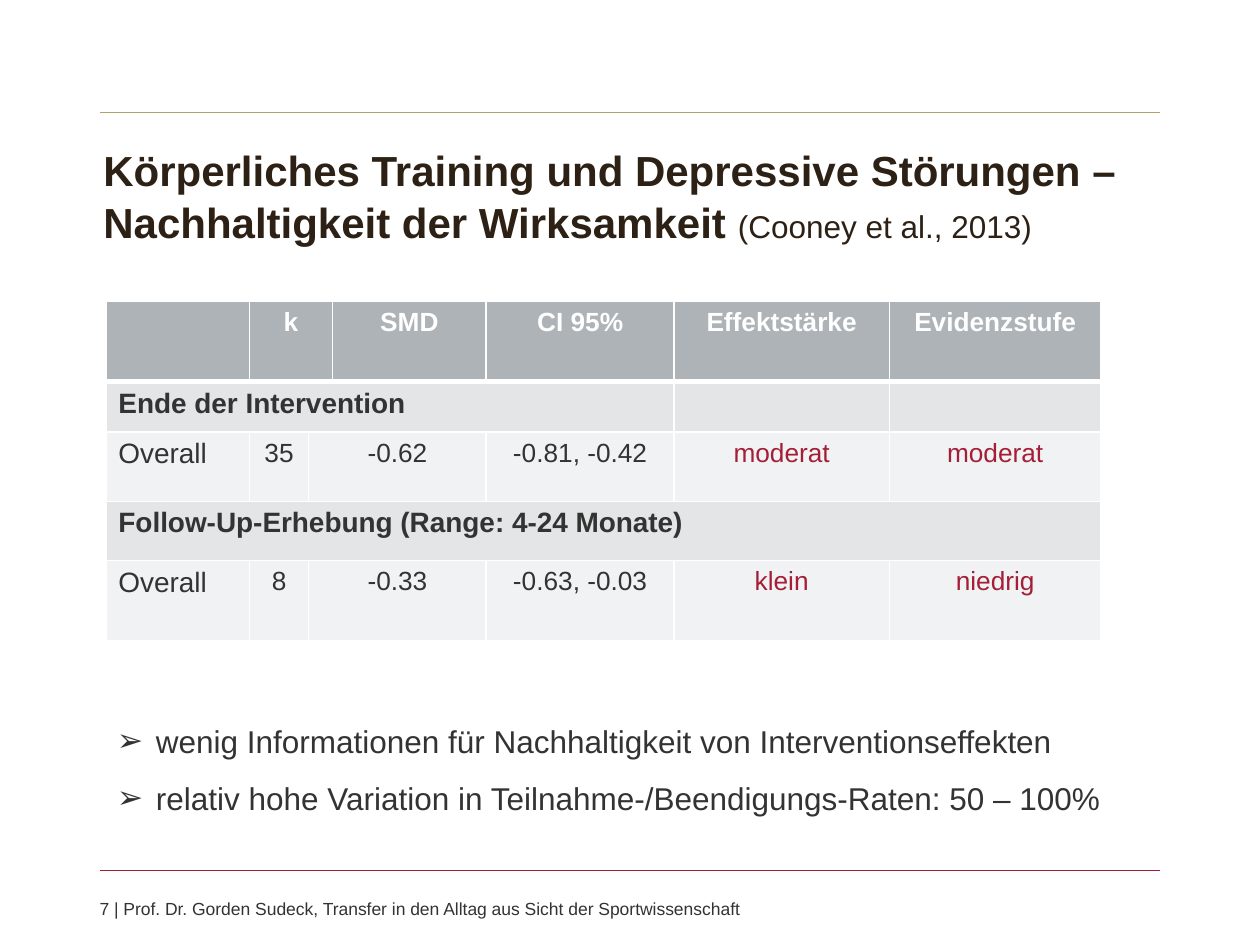
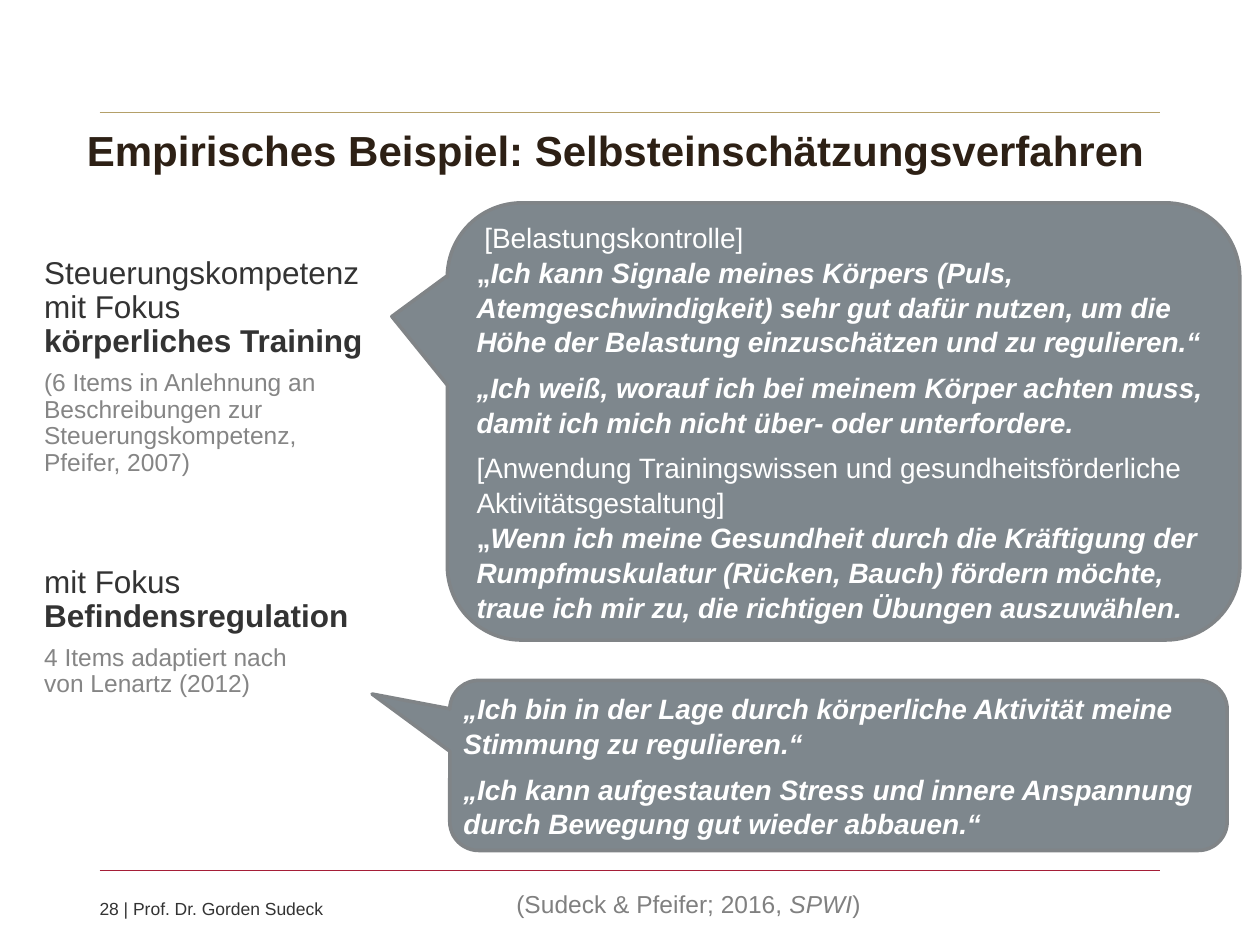
from copy import deepcopy
from dataclasses import dataclass
from typing import NamedTuple

from lxml.etree import SubElement
from pptx import Presentation
from pptx.dml.color import RGBColor as Rgb
from pptx.enum.shapes import MSO_CONNECTOR as Conn, MSO_SHAPE as Shp
from pptx.enum.text import MSO_ANCHOR as Anchor, PP_ALIGN as Align
from pptx.oxml.ns import qn
from pptx.util import Emu, Inches, Pt

SLIDE_W, SLIDE_H = Inches(10), Inches(7.5)


@dataclass(frozen=True)
class Theme:
    """Colours, type sizes and line spacing of the deck."""
    font: str = "Arial"
    title_ink: str = "2D2015"
    ink: str = "333333"
    muted: str = "858585"
    source: str = "808080"
    white: str = "FFFFFF"
    red: str = "A51E37"
    gold: str = "B4A069"
    head: str = "ADB3B7"
    section: str = "E3E5E6"
    row: str = "F1F2F3"
    bubble: str = "7E878D"
    bubble_edge: str = "808487"
    title: float = 24
    body: float = 18
    label: float = 16
    value: float = 15
    note: float = 14
    footer: float = 10
    leading: float = 1.04
    tight: float = 0.97


T = Theme()


class Box(NamedTuple):
    """Place in per cent of the slide's width and height."""
    x: float
    y: float
    w: float
    h: float

    def emu(self) -> tuple:
        """Return left, top, width and height in EMU."""
        return across(self.x), down(self.y), across(self.w), down(self.h)


class Run(NamedTuple):
    """Text with the format that differs from its paragraph."""
    text: str
    fmt: dict = {}


class Para(NamedTuple):
    """Runs of one paragraph with its space before and after."""
    runs: tuple
    before: float = 0
    after: float = 0


class Cell(NamedTuple):
    """Text of a table cell and the columns it covers."""
    text: str = ""
    span: int = 1
    fmt: dict = {}


class Row(NamedTuple):
    """Height, fill and cells of a table row."""
    height: float
    fill: str
    cells: tuple
    rule: float = 1


class Callout(NamedTuple):
    """Speech bubble with its pointer and paragraphs."""
    box: Box
    tip: tuple
    inset: float
    paras: tuple


def across(share: float) -> Emu:
    """Turn per cent of the slide's width into EMU."""
    return Emu(round(SLIDE_W * share / 100))


def down(share: float) -> Emu:
    """Turn per cent of the slide's height into EMU."""
    return Emu(round(SLIDE_H * share / 100))


def add_run(p, text: str, *, size: float = T.body, color: str = T.ink,
            bold: bool = False, italic: bool = False) -> None:
    """Add formatted text, with a line break at each newline."""
    for i, part in enumerate(text.split("\n")):
        if i:
            p.add_line_break()
            p._p[-1].append(deepcopy(r._r.rPr))
        r = p.add_run()
        r.text = part
        f = r.font
        f.name, f.size, f.bold, f.italic = T.font, Pt(size), bold, italic
        f.color.rgb = Rgb.from_string(color)
        if not part:
            p._p.remove(r._r)


def write(tf, paras: tuple, *, align=Align.LEFT, anchor=None, inset: tuple | None = None,
          spacing: float | None = None, bullet: str = "", **fmt) -> None:
    """Fill a text frame with paragraphs in one base format."""
    tf.word_wrap = True
    if anchor is not None:
        tf.vertical_anchor = anchor
    if inset is not None:
        tf.margin_left = tf.margin_right = Inches(inset[0])
        tf.margin_top = tf.margin_bottom = Inches(inset[1])
    for i, para in enumerate(paras):
        p = tf.add_paragraph() if i else tf.paragraphs[0]
        if bullet:
            pr = p._p.get_or_add_pPr()
            pr.set("marL", str(Inches(0.31)))
            pr.set("indent", str(-Inches(0.31)))
            SubElement(pr, qn("a:buFont"), typeface=T.font)
            SubElement(pr, qn("a:buChar"), char=bullet)
        p.alignment = align
        if spacing:
            p.line_spacing = spacing
        if i and para.before:
            p.space_before = Pt(para.before)
        if para.after:
            p.space_after = Pt(para.after)
        for run in para.runs:
            add_run(p, run.text, **{**fmt, **run.fmt})


def add_text(s, box: Box, paras: tuple, **fmt) -> None:
    """Place a text box."""
    write(s.shapes.add_textbox(*box.emu()).text_frame, paras, **fmt)


def add_rule(s, y: float, color: str) -> None:
    """Draw a thin line from margin to margin."""
    ln = s.shapes.add_connector(Conn.STRAIGHT, across(7.9), down(y), across(92.1), down(y))
    ln.line.color.rgb = Rgb.from_string(color)
    ln.line.width = Pt(0.75)
    SubElement(ln._element.spPr, qn("a:effectLst"))


def add_slide(prs, title: Box, runs: tuple, footer: str):
    """Start a slide with rules, title and footer."""
    s = prs.slides.add_slide(prs.slide_layouts[6])
    add_rule(s, 11.87, T.gold)
    add_rule(s, 92.13, T.red)
    add_text(s, title, (Para(runs),), size=T.title, color=T.title_ink, bold=True,
             anchor=Anchor.BOTTOM, inset=(0, 0), spacing=T.leading)
    add_text(s, Box(7.9, 95.07, 84.3, 2.27), (Para((Run(footer),)),),
             size=T.footer, inset=(0, 0))
    return s


def add_grid(s, x: float, y: float, cols: tuple, heights: tuple):
    """Add a plain table with the given columns and rows."""
    box = Box(x, y, sum(cols), sum(heights))
    tbl = s.shapes.add_table(len(heights), len(cols), *box.emu()).table
    tbl.first_row = tbl.horz_banding = False
    for col, w in zip(tbl.columns, cols):
        col.width = across(w)
    for row, h in zip(tbl.rows, heights):
        row.height = down(h)
    return tbl


def style_cell(c, fill: str, rule: float) -> None:
    """Give a cell its fill and white borders."""
    pr = c._tc.get_or_add_tcPr()
    for side in "LRTB":
        width = rule if side == "B" else 1
        ln = SubElement(pr, qn(f"a:ln{side}"), w=str(Pt(width)))
        SubElement(SubElement(ln, qn("a:solidFill")), qn("a:srgbClr"), val=T.white)
    c.fill.solid()
    c.fill.fore_color.rgb = Rgb.from_string(fill)


def add_results(s, rows: tuple) -> None:
    """Draw the table of effects."""
    tbl = add_grid(s, 8.4, 31.87, (11.4, 4.7, 1.9, 12.2, 14.9, 17.1, 16.8),
                   tuple(row.height for row in rows))
    for i, row in enumerate(rows):
        for c in tbl.rows[i].cells:
            style_cell(c, row.fill, row.rule)
        j = 0
        for cell in row.cells:
            c = tbl.cell(i, j)
            if cell.span > 1:
                c.merge(tbl.cell(i, j + cell.span - 1))
            if cell.text:
                write(c.text_frame, (Para((Run(cell.text),)),), **cell.fmt)
            j += cell.span


def add_callout(s, callout: Callout) -> None:
    """Draw a speech bubble."""
    sp = s.shapes.add_shape(Shp.ROUNDED_RECTANGULAR_CALLOUT, *callout.box.emu())
    sp.shadow.inherit = False
    for i, value in enumerate((*callout.tip, 0.17)):
        sp.adjustments[i] = value
    sp.fill.solid()
    sp.fill.fore_color.rgb = Rgb.from_string(T.bubble)
    sp.line.color.rgb = Rgb.from_string(T.bubble_edge)
    sp.line.width = Pt(2)
    write(sp.text_frame, callout.paras, size=T.label, color=T.white, bold=True,
          anchor=Anchor.MIDDLE, inset=(callout.inset, 0.05), spacing=T.leading)


def overall(height: float, k: str, smd: str, ci: str, effect: str, evidence: str) -> Row:
    """Build a row of overall results."""
    value = dict(size=T.value, align=Align.CENTER)
    rating = dict(value, color=T.red)
    return Row(height, T.row, (
        Cell("Overall", fmt=dict(size=T.label)), Cell(k, fmt=value), Cell(smd, 2, value),
        Cell(ci, fmt=value), Cell(effect, fmt=rating), Cell(evidence, fmt=rating)))


def build_effects(prs) -> None:
    """Build the slide on lasting effects."""
    s = add_slide(prs, Box(8.2, 15.33, 84.2, 10.8), (
        Run("Körperliches Training und Depressive Störungen –\nNachhaltigkeit der Wirksamkeit "),
        Run("(Cooney et al., 2013)", dict(size=T.body, bold=False))),
        "7 | Prof. Dr. Gorden Sudeck, Transfer in den Alltag aus Sicht der Sportwissenschaft")
    head = dict(size=T.value, color=T.white, bold=True, align=Align.CENTER)
    section = dict(size=T.label, bold=True)
    names = ("SMD", "CI 95%", "Effektstärke", "Evidenzstufe")
    add_results(s, (
        Row(8.53, T.head, (Cell(), Cell("k", 2, head), *(Cell(n, fmt=head) for n in names)), 3),
        Row(5.07, T.section, (Cell("Ende der Intervention", 5, section), Cell(), Cell())),
        overall(7.33, "35", "-0.62", "-0.81, -0.42", "moderat", "moderat"),
        Row(6.27, T.section, (Cell("Follow-Up-Erhebung (Range: 4-24 Monate)", 7, section),)),
        overall(8.53, "8", "-0.33", "-0.63, -0.03", "klein", "niedrig")))
    points = ("wenig Informationen für Nachhaltigkeit von Interventionseffekten",
              "relativ hohe Variation in Teilnahme-/Beendigungs-Raten: 50 – 100%")
    add_text(s, Box(8.3, 73.73, 81.6, 13.47), tuple(Para((Run(t),)) for t in points),
             bullet="➢", spacing=1.5)


def build_example(prs) -> None:
    """Build the slide on self-assessment."""
    s = add_slide(prs, Box(6.9, 13.2, 87.4, 5.33),
                  (Run("Empirisches Beispiel: Selbsteinschätzungsverfahren"),),
                  "28 | Prof. Dr. Gorden Sudeck")
    scales = (
        ("Steuerungskompetenz\nmit Fokus\n", "körperliches Training",
         "(6 Items in Anlehnung an Beschreibungen zur Steuerungskompetenz,\nPfeifer, 2007)"),
        ("mit Fokus ", "Befindensregulation", "4 Items adaptiert nach\nvon Lenartz (2012)"))
    tbl = add_grid(s, 2.5, 26.53, (31.1,), (32.67, 21.33, 10.4))
    for c in tbl.iter_cells():
        c.fill.background()
    for i, (lead, focus, note) in enumerate(scales):
        write(tbl.cell(i, 0).text_frame, (
            Para((Run(lead), Run(focus, dict(bold=True)))),
            Para((Run(note, dict(size=T.note, color=T.muted)),), before=6)), spacing=T.tight)
    plain, quote = dict(bold=False), dict(italic=True)
    callouts = (
        Callout(Box(35.5, 21.47, 62.9, 46.27), (-0.57, -0.24), 0.06, (
            Para((Run(" [Belastungskontrolle]\n", plain), Run("„"),
                  Run("Ich kann Signale meines Körpers (Puls, Atemgeschwindigkeit) sehr gut dafür "
                      "nutzen, um die Höhe der Belastung einzuschätzen und zu regulieren.“",
                      quote)), after=6),
            Para((Run("„Ich weiß, worauf ich bei meinem Körper achten muss, damit ich mich "
                      "nicht über- oder unterfordere.", quote),), after=6),
            Para((Run("[Anwendung Trainingswissen und gesundheitsförderliche "
                      "Aktivitätsgestaltung]\n", plain), Run("„"),
                  Run("Wenn ich meine Gesundheit durch die Kräftigung der Rumpfmuskulatur "
                      "(Rücken, Bauch) fördern möchte, traue ich mir zu, die richtigen "
                      "Übungen auszuwählen.", quote)), after=6))),
        Callout(Box(35.7, 72, 61.7, 18), (-0.6, -0.42), 0.04, (
            Para((Run("„Ich bin in der Lage durch körperliche Aktivität meine Stimmung "
                      "zu regulieren.“", quote),)),
            Para((Run("„Ich kann aufgestauten Stress und innere Anspannung durch Bewegung "
                      "gut wieder abbauen.“", quote),), before=6))))
    for callout in callouts:
        add_callout(s, callout)
    add_text(s, Box(40, 93.47, 33.3, 4.53), (
        Para((Run("(Sudeck & Pfeifer; 2016, "), Run("SPWI", quote), Run(")"))),),
        size=T.note, color=T.source)


def main() -> None:
    """Build and save the deck."""
    prs = Presentation()
    prs.slide_width, prs.slide_height = SLIDE_W, SLIDE_H
    build_effects(prs)
    build_example(prs)
    prs.save("out.pptx")


if __name__ == "__main__":
    main()
